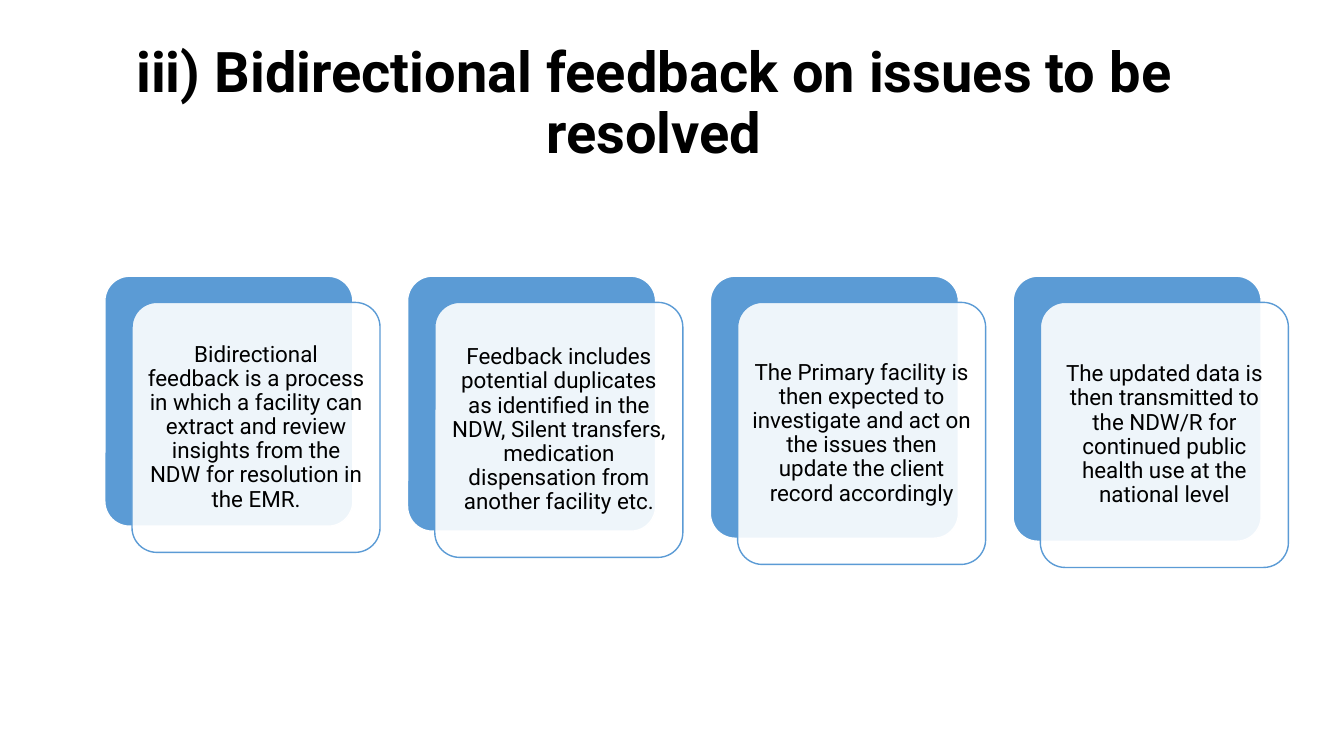
import pptx
import pptx.dml.color
import pptx.enum.shapes
import pptx.enum.text
import pptx.oxml
import pptx.oxml.ns
import pptx.util
from pptx.util import Inches

TITLE = "iii) Bidirectional feedback on issues to be resolved"

# Text and card height in inches
STEPS = [
    ("Bidirectional feedback is a process in which a facility can extract and "
     "review insights from the NDW for resolution in the EMR.", 2.48),
    ("Feedback includes potential duplicates as identified in the NDW, Silent "
     "transfers, medication dispensation from another facility etc.", 2.53),
    ("The Primary facility is then expected to investigate and act on the issues "
     "then update the client record accordingly", 2.6),
    ("The updated data is then transmitted to the NDW/R for continued public "
     "health use at the national level", 2.63),
]

THEME = {
    "blue": pptx.dml.color.RGBColor(0x5B, 0x9B, 0xD5),
    "white": pptx.dml.color.RGBColor(0xFF, 0xFF, 0xFF),
    "black": pptx.dml.color.RGBColor(0x00, 0x00, 0x00),
    "font": "Roboto",
    "title_size": 40,
    "body_size": 16,
}

CARD_LEFT, CARD_TOP, CARD_WIDTH, CARD_PITCH = 1.04, 2.74, 2.46, 3.003
FRONT_SHIFT_X, FRONT_SHIFT_Y = 0.27, 0.26
TEXT_MARGIN = 0.07


def write_text(shape, text, size, bold=False):
    frame = shape.text_frame
    frame.text = text
    frame_format = {
        "word_wrap": True,
        "auto_size": pptx.enum.text.MSO_AUTO_SIZE.NONE,
        "vertical_anchor": pptx.enum.text.MSO_ANCHOR.MIDDLE,
    }
    for name, value in frame_format.items():
        setattr(frame, name, value)
    paragraph = frame.paragraphs[0]
    paragraph.alignment = pptx.enum.text.PP_ALIGN.CENTER
    paragraph.line_spacing = 0.9
    font_format = {"name": THEME["font"], "size": pptx.util.Pt(size), "bold": bold}
    for name, value in font_format.items():
        setattr(paragraph.font, name, value)
    paragraph.font.color.rgb = THEME["black"]


def add_card(group, left, top, height, fill, line, opacity=100):
    card = group.shapes.add_shape(
        pptx.enum.shapes.MSO_SHAPE.ROUNDED_RECTANGLE,
        Inches(left), Inches(top), Inches(CARD_WIDTH), Inches(height))
    card.adjustments[0] = 0.1
    card.shadow.inherit = False
    card.fill.solid()
    card.fill.fore_color.rgb = fill
    card.line.color.rgb = line
    card.line.width = pptx.util.Pt(1)
    if opacity < 100:
        color = card.fill._xPr.find(".//" + pptx.oxml.ns.qn("a:srgbClr"))
        alpha = pptx.oxml.parse_xml(
            f'<a:alpha {pptx.oxml.ns.nsdecls("a")} val="{opacity * 1000}"/>')
        color.append(alpha)


def add_step(group, index, text, height):
    left = CARD_LEFT + index * CARD_PITCH
    front_left, front_top = left + FRONT_SHIFT_X, CARD_TOP + FRONT_SHIFT_Y
    add_card(group, left, CARD_TOP, height, THEME["blue"], THEME["white"])
    add_card(group, front_left, front_top, height, THEME["white"], THEME["blue"], 90)
    box = group.shapes.add_textbox(
        Inches(front_left + TEXT_MARGIN), Inches(front_top + TEXT_MARGIN),
        Inches(CARD_WIDTH - 2 * TEXT_MARGIN), Inches(height - 2 * TEXT_MARGIN))
    for side in ("left", "top", "right", "bottom"):
        setattr(box.text_frame, f"margin_{side}", Inches(TEXT_MARGIN))
    write_text(box, text, THEME["body_size"])


def main():
    presentation = pptx.Presentation()
    presentation.slide_width, presentation.slide_height = Inches(13.33), Inches(7.5)
    slide = presentation.slides.add_slide(presentation.slide_layouts[5])

    title = slide.shapes.title
    title_place = {"left": 1.19, "top": 0.19, "width": 10.59, "height": 1.7}
    for name, value in title_place.items():
        setattr(title, name, Inches(value))
    write_text(title, TITLE, THEME["title_size"], bold=True)

    group = slide.shapes.add_group_shape()
    for index, (text, height) in enumerate(STEPS):
        add_step(group, index, text, height)

    presentation.save("out.pptx")


if __name__ == "__main__":
    main()
